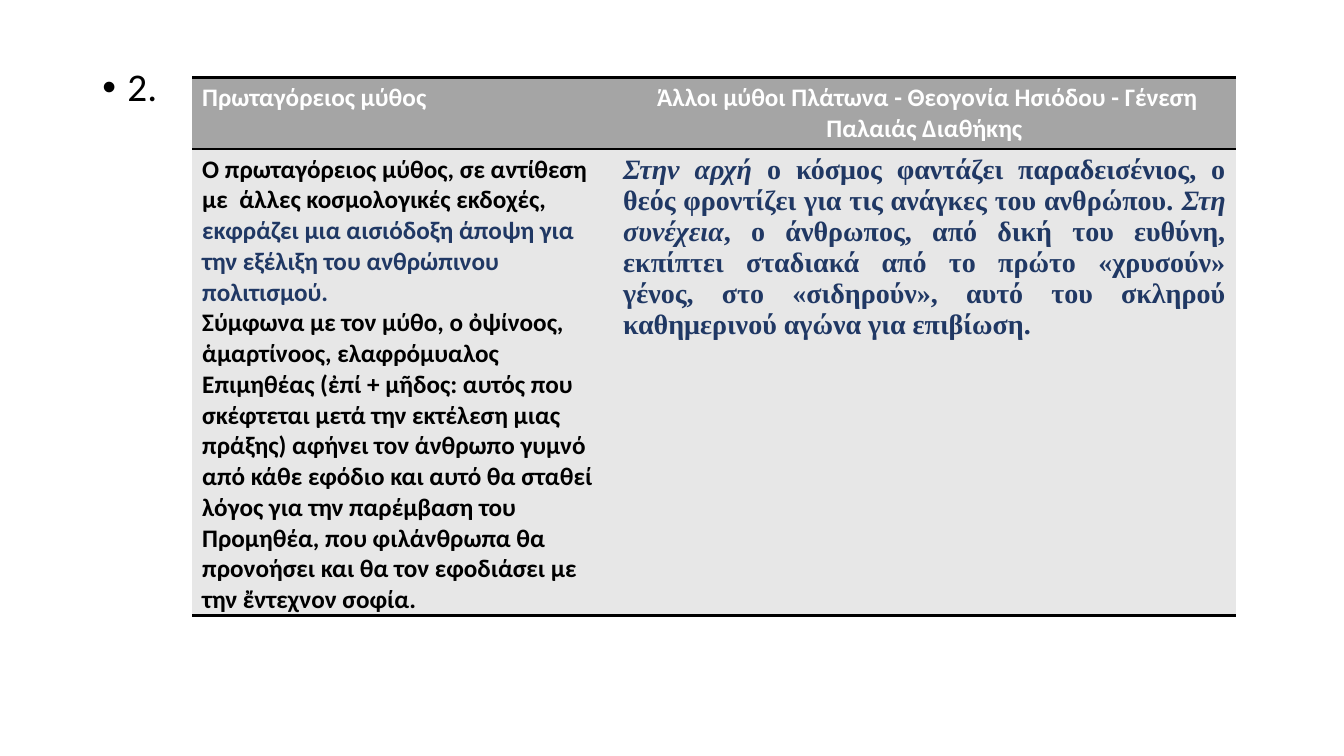
from dataclasses import dataclass

from lxml import etree
from pptx import Presentation, util as u
from pptx.dml.color import RGBColor
from pptx.enum import text as t
from pptx.oxml import ns

PX = 9525  # EMU in one px, 96 px to the inch


@dataclass(frozen=True)
class Theme:
    black: str = "000000"
    white: str = "FFFFFF"
    navy: str = "203864"
    head: str = "A5A5A5"
    body: str = "E7E7E7"
    sans: str = "Calibri"
    serif: str = "Times New Roman"
    small: int = 18
    mid: int = 20
    large: int = 28
    rule: int = 2


@dataclass(frozen=True)
class Run:
    text: str
    color: str | None = None
    slant: bool = False


@dataclass(frozen=True)
class Para:
    runs: list[Run]
    color: str
    size: int
    face: str
    bold: bool = True
    align: t.PP_ALIGN = t.PP_ALIGN.LEFT


@dataclass(frozen=True)
class Cell:
    fill: str
    paras: list[Para]


TH = Theme()
COLS = [401, 593]
ROWS = [68, 444]

GRID = [
    [
        Cell(TH.head, [Para([Run("Πρωταγόρειος μύθος")], TH.white, TH.small, TH.sans)]),
        Cell(TH.head, [Para(
            [Run(" Άλλοι μύθοι Πλάτωνα - Θεογονία Ησιόδου - Γένεση Παλαιάς Διαθήκης")],
            TH.white, TH.small, TH.sans, align=t.PP_ALIGN.CENTER)]),
    ],
    [
        Cell(TH.body, [
            Para([
                Run("Ο πρωταγόρειος μύθος, σε αντίθεση με  άλλες κοσμολογικές εκδοχές, "),
                Run("εκφράζει μια αισιόδοξη άποψη για την εξέλιξη του ανθρώπινου "
                    "πολιτισμού.", TH.navy),
            ], TH.black, TH.small, TH.sans),
            Para([Run(
                "Σύμφωνα με τον μύθο, ο ὀψίνοος, ἁμαρτίνοος, ελαφρόμυαλος Επιμηθέας "
                "(ἐπί + μῆδος: αυτός που σκέφτεται μετά την εκτέλεση μιας πράξης) "
                "αφήνει τον άνθρωπο γυμνό από κάθε εφόδιο και αυτό θα σταθεί λόγος "
                "για την παρέμβαση του Προμηθέα, που φιλάνθρωπα θα προνοήσει και θα "
                "τον εφοδιάσει με την ἔντεχνον σοφία.")],
                TH.black, TH.small, TH.sans),
        ]),
        Cell(TH.body, [Para([
            Run("Στην αρχή ", slant=True),
            Run("ο κόσμος φαντάζει παραδεισένιος, ο θεός φροντίζει για τις ανάγκες "
                "του ανθρώπου. "),
            Run("Στη συνέχεια", slant=True),
            Run(", ο άνθρωπος, από δική του ευθύνη, εκπίπτει σταδιακά από το πρώτο "
                "«χρυσούν» γένος, στο «σιδηρούν», αυτό του σκληρού καθημερινού "
                "αγώνα για επιβίωση."),
        ], TH.navy, TH.mid, TH.serif, align=t.PP_ALIGN.JUSTIFY)]),
    ],
]


def write(frame, paras: list[Para]) -> None:
    for i, item in enumerate(paras):
        para = frame.add_paragraph() if i else frame.paragraphs[0]
        para.alignment = item.align
        font = para.font
        font.name, font.size, font.bold = item.face, u.Pt(item.size), item.bold
        font.color.rgb = RGBColor.from_string(item.color)
        for part in item.runs:
            run = para.add_run()
            run.text = part.text
            if part.slant:
                run.font.italic = True
            if part.color:
                run.font.color.rgb = RGBColor.from_string(part.color)


def edge(cell) -> None:
    """Rule the top and bottom of a cell and clear its sides."""
    props = cell._tc.get_or_add_tcPr()
    for side in "LRTB":
        line = etree.SubElement(props, ns.qn(f"a:ln{side}"))
        if side in "LR":
            etree.SubElement(line, ns.qn("a:noFill"))
        else:
            line.set("w", str(u.Pt(TH.rule)))
            fill = etree.SubElement(line, ns.qn("a:solidFill"))
            etree.SubElement(fill, ns.qn("a:srgbClr"), val=TH.black)


def add_point(slide) -> None:
    box = slide.shapes.add_textbox(88 * PX, 60 * PX, 1104 * PX, 521 * PX)
    frame = box.text_frame
    frame.word_wrap = True
    write(frame, [Para([Run("2.")], TH.black, TH.large, TH.sans, bold=False)])
    para = frame.paragraphs[0]
    para.line_spacing, para.space_before = 0.9, u.Pt(10)
    props = para._p.get_or_add_pPr()
    props.set("marL", str(24 * PX))
    props.set("indent", str(-24 * PX))
    # Bullet marks come just ahead of the default run properties
    mark = props.find(ns.qn("a:defRPr"))
    for tag, key, val in [("buFont", "typeface", "Arial"), ("buChar", "char", "•")]:
        node = etree.Element(ns.qn(f"a:{tag}"))
        node.set(key, val)
        mark.addprevious(node)


def add_grid(slide) -> None:
    table = slide.shapes.add_table(
        len(ROWS), len(COLS), 183 * PX, 74 * PX, sum(COLS) * PX, sum(ROWS) * PX).table
    table.first_row = table.horz_banding = False
    for col, width in zip(table.columns, COLS):
        col.width = width * PX
    for r, (height, row) in enumerate(zip(ROWS, GRID)):
        table.rows[r].height = height * PX
        for c, item in enumerate(row):
            cell = table.cell(r, c)
            edge(cell)
            cell.fill.solid()
            cell.fill.fore_color.rgb = RGBColor.from_string(item.fill)
            write(cell.text_frame, item.paras)


def main() -> None:
    deck = Presentation()
    deck.slide_width, deck.slide_height = 1280 * PX, 720 * PX
    slide = deck.slides.add_slide(deck.slide_layouts[6])
    # Numbered point, then the comparison of myths
    add_point(slide)
    add_grid(slide)
    deck.save("out.pptx")


if __name__ == "__main__":
    main()
